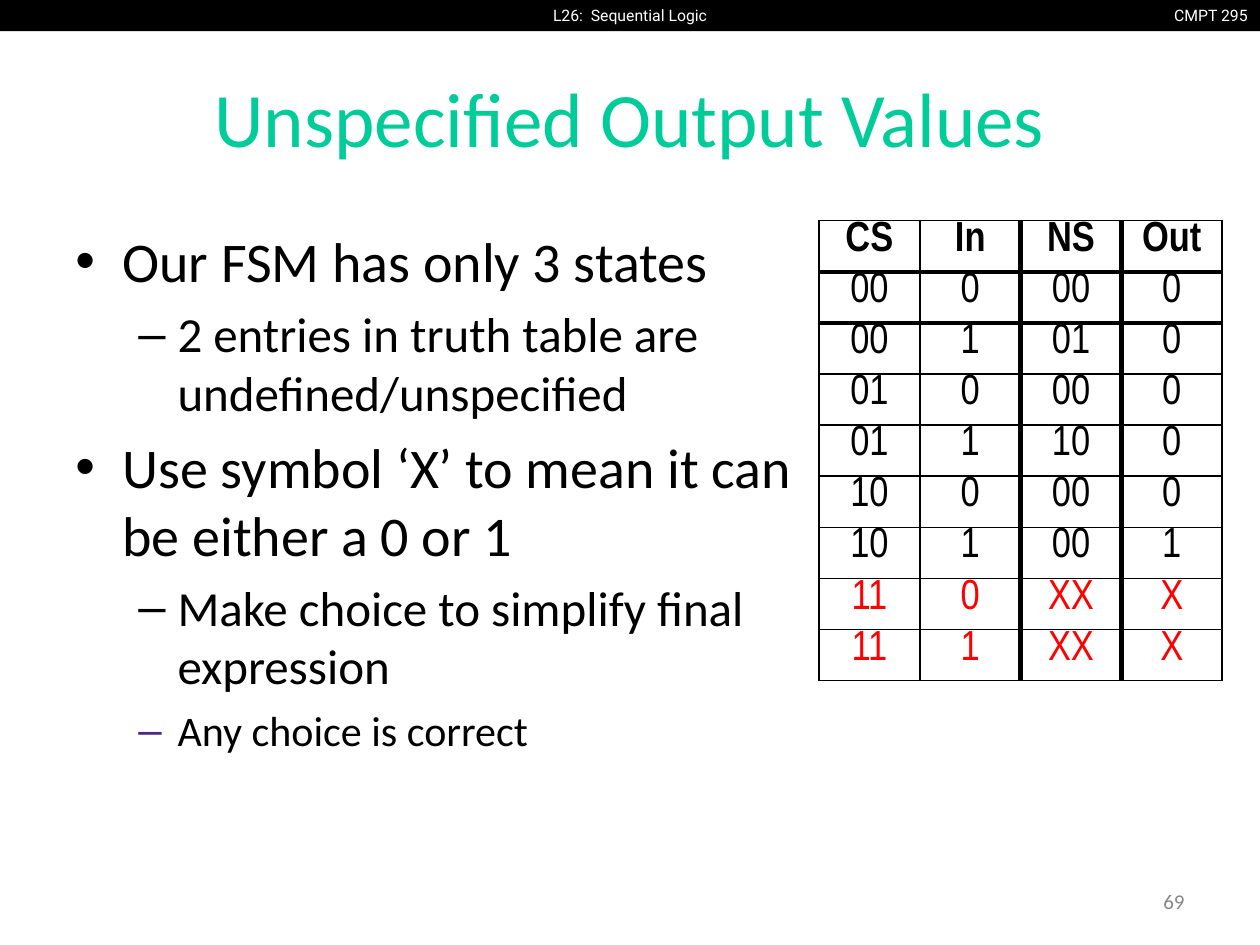
from lxml import etree
from pptx import Presentation
from pptx import util as u
from pptx.dml.color import RGBColor
from pptx.enum import shapes, text
from pptx.oxml.ns import qn

COLORS = {"black": "000000", "white": "FFFFFF", "title": "00CC99",
          "unspecified": "FF0000", "accent": "4B2A85", "page": "888888"}
ALIGN, ANCHOR = text.PP_ALIGN, text.MSO_ANCHOR

# Text, level, size, space before, bullet colour
POINTS = [
    ("Our FSM has only 3 states", 0, 32, 0, "black"),
    ("2 entries in truth table are\vundefined/unspecified", 1, 28, 5.6, "black"),
    ("Use symbol ‘X’ to mean it can\vbe either a 0 or 1", 0, 32, 6.4, "black"),
    ("Make choice to simplify final\vexpression", 1, 28, 5.6, "black"),
    ("Any choice is correct", 1, 24, 5.6, "accent"),
]
BULLETS = [("•", 0.95, -0.95), ("–", 2.06, -0.79)]  # mark, margin, indent

TRUTH_TABLE = [
    ("CS", "In", "NS", "Out"),
    ("00", "0", "00", "0"),
    ("00", "1", "01", "0"),
    ("01", "0", "00", "0"),
    ("01", "1", "10", "0"),
    ("10", "0", "00", "0"),
    ("10", "1", "00", "1"),
    ("11", "0", "XX", "X"),
    ("11", "1", "XX", "X"),
]
THICK_COLUMN_EDGES, THICK_ROW_EDGES = (2, 3), (1, 2)


def rgb(name):
    return RGBColor.from_string(COLORS[name])


def style(paragraph, font, size, color, bold=False):
    for run in paragraph.runs:
        run.font.name, run.font.size = font, u.Pt(size)
        run.font.bold = bold
        run.font.color.rgb = rgb(color)


def add_frame(slide, box, wrap=True, anchor=ANCHOR.TOP):
    frame = slide.shapes.add_textbox(*(u.Cm(v) for v in box)).text_frame
    frame.word_wrap = wrap
    frame.vertical_anchor = anchor
    return frame


def add_line(slide, box, words, font, size, color, align, wrap=True):
    frame = add_frame(slide, box, wrap, ANCHOR.MIDDLE)
    frame.text = words
    frame.paragraphs[0].alignment = align
    style(frame.paragraphs[0], font, size, color)


def add_header(slide, box):
    left, top, width, height = box
    bar = slide.shapes.add_shape(shapes.MSO_SHAPE.RECTANGLE, *(u.Cm(v) for v in box))
    bar.shadow.inherit = False
    bar.fill.solid()
    bar.fill.fore_color.rgb = rgb("black")
    bar.line.fill.background()
    for words, label_width, share, align in (
            ("CMPT 295", 2.06, 1, ALIGN.RIGHT),
            ("L26:  Sequential Logic", 4.72, 0.5, ALIGN.CENTER)):
        label = (left + (width - label_width) * share, top, label_width, height)
        add_line(slide, label, words, "Roboto", 9, "white", align, wrap=False)


def set_bullet(paragraph, mark, margin, indent, color):
    props = paragraph._p.get_or_add_pPr()
    props.set("marL", str(u.Cm(margin)))
    props.set("indent", str(u.Cm(indent)))
    bullet_color = etree.SubElement(props, qn("a:buClr"))
    etree.SubElement(bullet_color, qn("a:srgbClr"), val=COLORS[color])
    etree.SubElement(props, qn("a:buFont"), typeface="Arial")
    etree.SubElement(props, qn("a:buChar"), char=mark)


def add_points(slide, box):
    frame = add_frame(slide, box)
    for i, (words, level, size, before, color) in enumerate(POINTS):
        paragraph = frame.add_paragraph() if i else frame.paragraphs[0]
        paragraph.text = words
        paragraph.level = level
        set_bullet(paragraph, *BULLETS[level], color)
        if before:
            paragraph.space_before = u.Pt(before)
        style(paragraph, "Calibri", size, "black")


def set_borders(cell, row, column):
    props = cell._tc.get_or_add_tcPr()
    for side, edge, thick in (("L", column, THICK_COLUMN_EDGES),
                              ("R", column + 1, THICK_COLUMN_EDGES),
                              ("T", row, THICK_ROW_EDGES),
                              ("B", row + 1, THICK_ROW_EDGES)):
        width = u.Pt(3 if edge in thick else 1)
        line = etree.SubElement(props, qn(f"a:ln{side}"), w=str(width))
        fill = etree.SubElement(line, qn("a:solidFill"))
        etree.SubElement(fill, qn("a:srgbClr"), val=COLORS["black"])


def add_truth_table(slide, box):
    rows, columns = len(TRUTH_TABLE), len(TRUTH_TABLE[0])
    left, top, width, height = (u.Cm(v) for v in box)
    table = slide.shapes.add_table(rows, columns, left, top, width, height).table
    table.first_row = table.horz_banding = False
    for r, values in enumerate(TRUTH_TABLE):
        color = "unspecified" if values[0] == "11" else "black"
        for c, value in enumerate(values):
            cell = table.cell(r, c)
            cell.margin_left = cell.margin_right = 0
            cell.margin_top = cell.margin_bottom = 0
            set_borders(cell, r, c)
            cell.fill.background()
            cell.text = value
            paragraph = cell.text_frame.paragraphs[0]
            paragraph.alignment = ALIGN.CENTER
            style(paragraph, "Arial Narrow", 24, color, bold=r == 0)


def main():
    deck = Presentation()
    deck.slide_width, deck.slide_height = u.Cm(25.4), u.Cm(19.05)
    slide = deck.slides.add_slide(deck.slide_layouts[6])

    add_header(slide, (0, 0, 25.4, 0.63))
    # Title
    add_line(slide, (1.27, 0.76, 22.86, 3.18), "Unspecified Output Values",
             "Calibri", 44, "title", ALIGN.CENTER)
    add_points(slide, (1.27, 4.45, 22.86, 13.46))
    # Page number
    add_line(slide, (18.2, 17.66, 5.93, 1.01), "69", "Calibri", 12, "page", ALIGN.RIGHT)
    add_truth_table(slide, (16.51, 4.45, 8.13, 9.27))

    deck.save("out.pptx")


if __name__ == "__main__":
    main()
